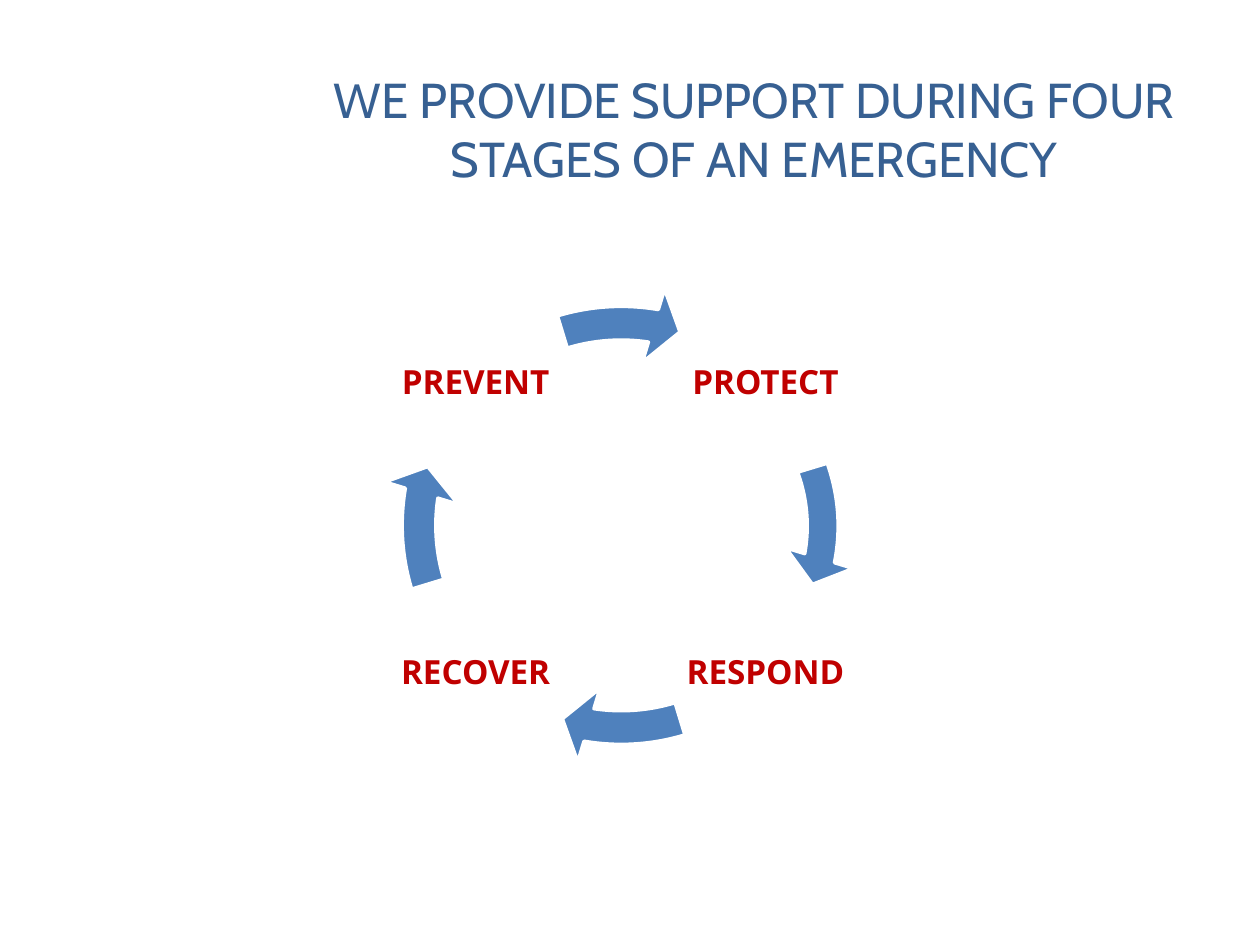
import pptx
import pptx.dml.color
import pptx.enum.shapes
import pptx.enum.text
import pptx.util

Inches = pptx.util.Inches


def paint(colour_format, hex_colour):
    colour_format.rgb = pptx.dml.color.RGBColor.from_string(hex_colour)


def write(frame, text, font_name, size, hex_colour, bold):
    frame.text = text
    frame.word_wrap = True
    frame.vertical_anchor = pptx.enum.text.MSO_ANCHOR.MIDDLE
    paragraph = frame.paragraphs[0]
    paragraph.alignment = pptx.enum.text.PP_ALIGN.CENTER
    font = paragraph.runs[0].font
    font.name = font_name
    font.size = pptx.util.Pt(size)
    font.bold = bold
    paint(font.color, hex_colour)


deck = pptx.Presentation()
deck.slide_width = Inches(10)
deck.slide_height = Inches(7.5)
slide = deck.slides.add_slide(deck.slide_layouts[5])

heading = slide.shapes.title
heading.left, heading.top = Inches(2.47), Inches(0.45)
heading.width, heading.height = Inches(7.03), Inches(1.14)
write(heading.text_frame, "WE PROVIDE SUPPORT DURING FOUR STAGES OF AN EMERGENCY",
      "Cabin", 28, "376092", False)

left, right, upper, lower = 3.1, 5.4, 2.35, 4.65
stages = [
    ("PROTECT", right, upper, (3.04, 2.42, 3.77, 3.51)),
    ("RESPOND", right, lower, (3.02, 2.26, 3.82, 3.82)),
    ("RECOVER", left, lower, (3.02, 2.26, 3.82, 3.82)),
    ("PREVENT", left, upper, (3.02, 2.26, 3.82, 3.82)),
]
quarter_turn = 54
full_turn = 4 * quarter_turn

for turn, (stage, x, y, arrow_box) in enumerate(stages):
    label = slide.shapes.add_textbox(Inches(x), Inches(y), Inches(1.35), Inches(1.35))
    frame = label.text_frame
    frame.margin_left = frame.margin_right = Inches(0.03)
    frame.margin_top = frame.margin_bottom = Inches(0.03)
    write(frame, stage, "Noto Sans", 19, "C00000", True)

    arrow = slide.shapes.add_shape(
        pptx.enum.shapes.MSO_SHAPE.CIRCULAR_ARROW, *map(Inches, arrow_box))
    end_angle = 5.5 + turn * quarter_turn
    start_angle = (205.85 + turn * quarter_turn) % full_turn
    for index, value in enumerate((0.07, 4.65, end_angle, start_angle, 0.08)):
        arrow.adjustments[index] = value
    arrow.shadow.inherit = False
    arrow.fill.solid()
    paint(arrow.fill.fore_color, "4F81BD")
    paint(arrow.line.color, "FFFFFF")
    arrow.line.width = pptx.util.Pt(2)

deck.save("out.pptx")
